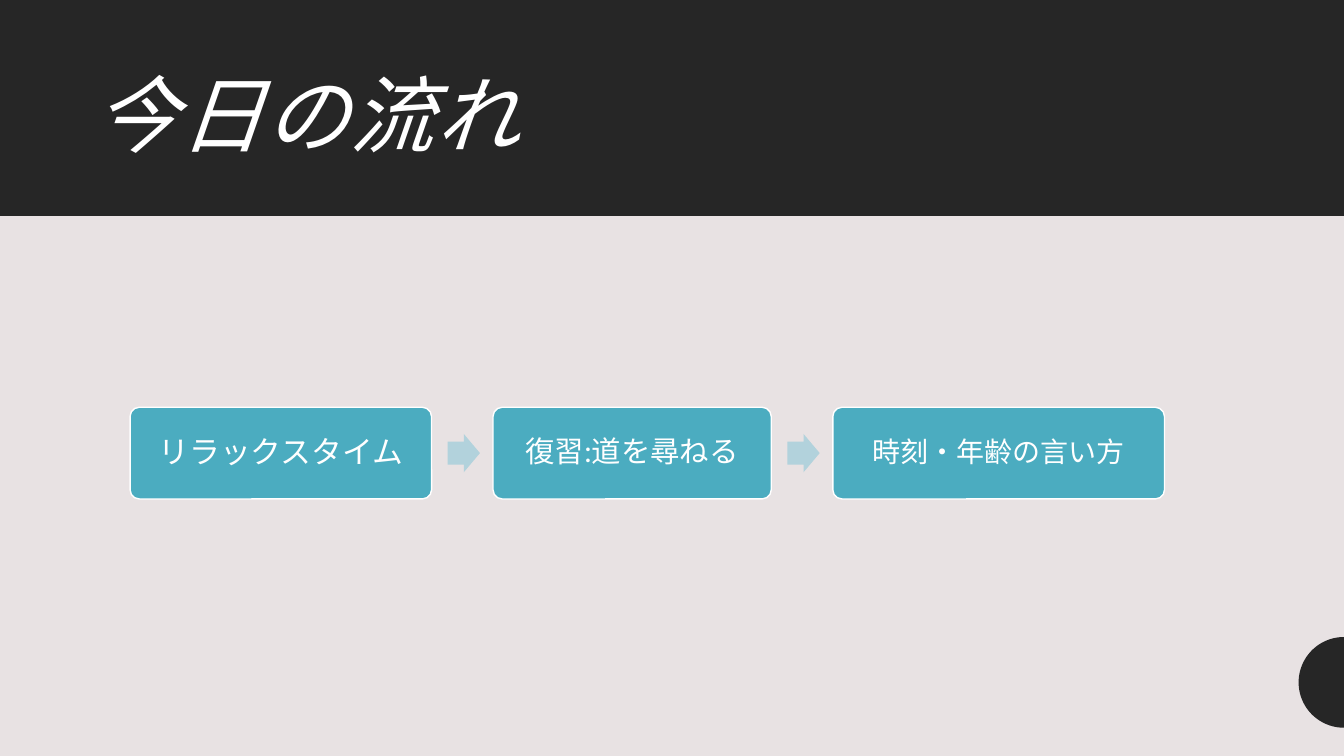
import math
from dataclasses import dataclass
from lxml import etree
from pptx import Presentation
from pptx import util as u
from pptx.dml.color import RGBColor
from pptx.enum import shapes, text
from pptx.oxml import ns


@dataclass(frozen=True)
class Theme:
    """Colours, type sizes and fonts of the slide."""
    dark: str = "262626"
    paper: str = "E8E2E3"
    step: str = "4BACC0"
    arrow: str = "B2D2DC"
    white: str = "FFFFFF"
    title_size: int = 60
    title_font: str = "Roboto"


THEME = Theme()
WIDTH, HEIGHT = 13.33, 7.5
STEPS = [
    ("リラックスタイム", 2.99, 22, "Lato", 0.09),
    ("復習:道を尋ねる", 2.76, 21, "Lato", 0.09),
    ("時刻・年齢の言い方", 3.29, 20, "Arial", 0.08),
]


def paint(shape, fill, line=None):
    """Fill a shape, outline it if a line colour is given, and drop its shadow."""
    shape.shadow.inherit = False
    shape.fill.solid()
    shape.fill.fore_color.rgb = RGBColor.from_string(fill)
    if line:
        shape.line.color.rgb = RGBColor.from_string(line)
        shape.line.width = u.Pt(1)
    else:
        shape.line.fill.background()


def add_block(slide, kind, box, fill, line=None):
    """Add a painted preset shape in the given box."""
    block = slide.shapes.add_shape(kind, *map(u.Inches, box))
    paint(block, fill, line)
    return block


def write(frame, wording, size, font, align, inset_x, inset_y):
    """Write one vertically centred line of white text and return its run."""
    frame.word_wrap = True
    frame.vertical_anchor = text.MSO_ANCHOR.MIDDLE
    frame.margin_left = frame.margin_right = u.Inches(inset_x)
    frame.margin_top = frame.margin_bottom = u.Inches(inset_y)
    paragraph = frame.paragraphs[0]
    paragraph.alignment = align
    paragraph.line_spacing = 0.9
    run = paragraph.add_run()
    run.text = wording
    run.font.size = u.Pt(size)
    run.font.name = font
    run.font.color.rgb = RGBColor.from_string(THEME.white)
    etree.SubElement(run.font._element, ns.qn("a:ea"), typeface=font)
    return run


def add_header(slide, left, top, width, height):
    """Draw the dark band with the italic title."""
    add_block(slide, shapes.MSO_SHAPE.RECTANGLE, (left, top, width, height), THEME.dark)
    margin = width / 16
    title = slide.shapes.add_textbox(
        u.Inches(left + margin), u.Inches(top + 0.46),
        u.Inches(width - 2 * margin), u.Inches(1.45))
    run = write(title.text_frame, "今日の流れ", THEME.title_size, THEME.title_font,
                text.PP_ALIGN.LEFT, 0.1, 0.05)
    run.font.italic = True
    run.font._element.set("spc", "100")


def add_half_disc(slide, right, middle, radius):
    """Draw a half disc that ends at the right edge."""
    angles = [math.pi * (0.5 + part / 48) for part in range(49)]
    rim = [(u.Inches(right + radius * math.cos(a)), u.Inches(middle - radius * math.sin(a)))
           for a in angles]
    outline = slide.shapes.build_freeform(*rim[0])
    outline.add_line_segments(rim[1:], close=True)
    paint(outline.convert_to_shape(), THEME.dark)


def add_flow(slide, left, top, height):
    """Lay out the steps from left to right with an arrow between neighbours."""
    gap, arrow_width, arrow_height = 0.61, 0.32, 0.38
    for index, (wording, width, size, font, inset) in enumerate(STEPS):
        if index:
            arrow = add_block(
                slide, shapes.MSO_SHAPE.RIGHT_ARROW,
                (left - gap + 0.16, top + (height - arrow_height) / 2,
                 arrow_width, arrow_height), THEME.arrow)
            arrow.adjustments[0] = 0.6
        step = add_block(slide, shapes.MSO_SHAPE.ROUNDED_RECTANGLE,
                         (left, top, width, height), THEME.step, THEME.white)
        step.adjustments[0] = 0.1
        write(step.text_frame, wording, size, font, text.PP_ALIGN.CENTER, inset, inset)
        left += width + gap


def main():
    """Build the slide and save it."""
    deck = Presentation()
    deck.slide_width, deck.slide_height = u.Inches(WIDTH), u.Inches(HEIGHT)
    slide = deck.slides.add_slide(deck.slide_layouts[6])
    slide.background.fill.solid()
    slide.background.fill.fore_color.rgb = RGBColor.from_string(THEME.paper)
    add_header(slide, 0, 0, WIDTH, HEIGHT * 2 / 7)
    add_half_disc(slide, WIDTH, 6.77, 0.45)
    add_flow(slide, 1.29, 4.04, 0.91)
    deck.save("out.pptx")


if __name__ == "__main__":
    main()
